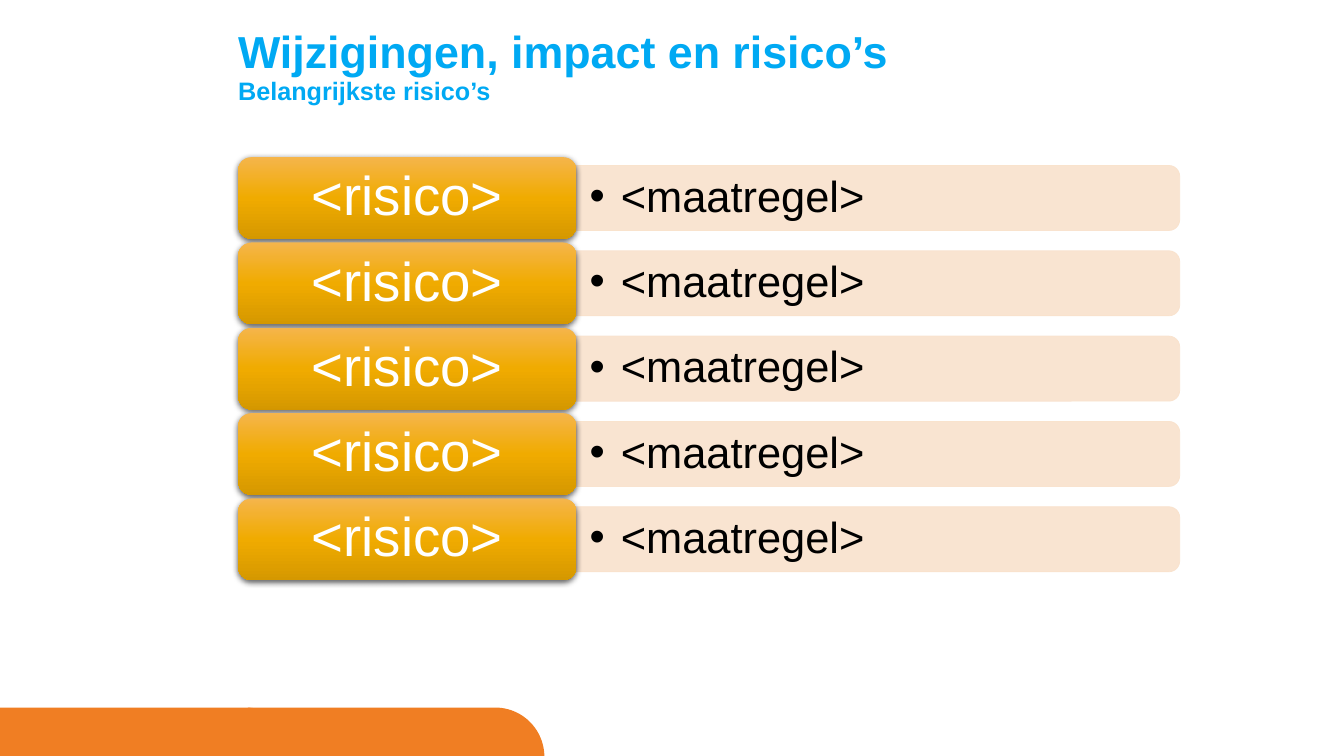
from copy import deepcopy
from dataclasses import dataclass
from math import cos, pi, sin

from lxml.etree import SubElement
from pptx import Presentation
from pptx.dml.color import RGBColor
from pptx.enum.shapes import MSO_SHAPE
from pptx.enum.text import MSO_ANCHOR, MSO_AUTO_SIZE, PP_ALIGN
from pptx.oxml.ns import qn
from pptx.util import Cm, Pt

# Content
TITLE = "Wijzigingen, impact en risico’s"
SUBTITLE = "Belangrijkste risico’s"
RISKS = [("<risico>", "<maatregel>")] * 5


@dataclass(frozen=True)
class Theme:
    font: str = "Arial"
    title: str = "00A9F3"
    footer: str = "F07E23"
    bar: str = "F9E2CC"
    card_text: str = "FFFFFF"
    bar_text: str = "000000"
    shadow: str = "000000"
    card_stops: tuple = ((0, "F5B54B"), (0.5, "F0AB00"), (1, "D59800"))
    title_size: int = 32
    subtitle_size: int = 18
    card_size: int = 39
    bar_size: int = 31


THEME = Theme()

# Layout in centimetres
TITLE_BOX = (6, 0.76, 27.86, 2)
LEFT, TOP, PITCH = 6, 3.96, 2.15
CARD_WIDTH, CARD_HEIGHT = 8.53, 2.06
BAR_WIDTH, BAR_HEIGHT = 15.2, 1.64
FOOTER_LEFTS, FOOTER_TOP = (-0.03, 6.25), 17.83
FOOTER_WIDTH, FOOTER_RADIUS = 7.47, 1.24
ARC_STEPS = 24


def color(value):
    return RGBColor.from_string(value)


def lengths(*values):
    return [Cm(value) for value in values]


def format_frame(frame, anchor, side=0, edge=0):
    values = {
        "word_wrap": True, "auto_size": MSO_AUTO_SIZE.NONE, "vertical_anchor": anchor,
        "margin_left": Cm(side), "margin_right": Cm(side),
        "margin_top": Cm(edge), "margin_bottom": Cm(edge),
    }
    for name, value in values.items():
        setattr(frame, name, value)


def format_paragraph(paragraph, alignment):
    values = {"alignment": alignment, "line_spacing": 0.9, "space_before": Pt(0)}
    for name, value in values.items():
        setattr(paragraph, name, value)


def add_run(paragraph, text, size, text_color, bold=False):
    run = paragraph.add_run()
    run.text = text
    for name, value in {"name": THEME.font, "size": Pt(size), "bold": bold}.items():
        setattr(run.font, name, value)
    run.font.color.rgb = color(text_color)


def add_footer_tab(slide, left):
    right, bottom = left + FOOTER_WIDTH, FOOTER_TOP + FOOTER_RADIUS
    center = right - FOOTER_RADIUS
    angles = [pi / 2 * step / ARC_STEPS for step in range(ARC_STEPS + 1)]
    corner = [
        lengths(center + FOOTER_RADIUS * sin(angle), bottom - FOOTER_RADIUS * cos(angle))
        for angle in angles
    ]
    builder = slide.shapes.build_freeform(*lengths(left, bottom))
    builder.add_line_segments([lengths(left, FOOTER_TOP), *corner], close=True)
    shape = builder.convert_to_shape()
    shape.shadow.inherit = False
    shape.fill.solid()
    shape.fill.fore_color.rgb = color(THEME.footer)
    shape.line.fill.background()


def add_title(slide):
    title = slide.shapes.title
    title.left, title.top, title.width, title.height = lengths(*TITLE_BOX)
    format_frame(title.text_frame, MSO_ANCHOR.TOP)
    paragraph = title.text_frame.paragraphs[0]
    format_paragraph(paragraph, PP_ALIGN.LEFT)
    add_run(paragraph, TITLE, THEME.title_size, THEME.title, bold=True)
    paragraph.add_line_break()
    add_run(paragraph, SUBTITLE, THEME.subtitle_size, THEME.title, bold=True)


def add_measure(slide, text, middle):
    # Bar: an upright shape turned a quarter, so its rounded end points right
    left = LEFT + CARD_WIDTH
    bar = slide.shapes.add_shape(
        MSO_SHAPE.ROUND_2_SAME_RECTANGLE,
        *lengths(left + (BAR_WIDTH - BAR_HEIGHT) / 2, middle - BAR_WIDTH / 2,
                 BAR_HEIGHT, BAR_WIDTH))
    bar.rotation = 90
    bar.shadow.inherit = False
    bar.line.width = Pt(0.5)
    for fill in (bar.fill, bar.line.fill):
        fill.solid()
        fill.fore_color.rgb = color(THEME.bar)
    for element in bar._element.spPr.iter(qn("a:srgbClr")):
        SubElement(element, qn("a:alpha"), val="90000")

    # Level text with a bullet
    box = slide.shapes.add_textbox(
        *lengths(left, middle - BAR_HEIGHT / 2, BAR_WIDTH, BAR_HEIGHT))
    format_frame(box.text_frame, MSO_ANCHOR.MIDDLE, 0.33, 0.16)
    paragraph = box.text_frame.paragraphs[0]
    format_paragraph(paragraph, PP_ALIGN.LEFT)
    properties = paragraph._p.get_or_add_pPr()
    properties.set("marL", str(Cm(0.79)))
    properties.set("indent", str(-Cm(0.79)))
    SubElement(properties, qn("a:buFont"), typeface=THEME.font)
    SubElement(properties, qn("a:buChar"), char="•")
    add_run(paragraph, text, THEME.bar_size, THEME.bar_text)


def add_risk(slide, text, top):
    card = slide.shapes.add_shape(
        MSO_SHAPE.ROUNDED_RECTANGLE, *lengths(LEFT, top, CARD_WIDTH, CARD_HEIGHT))
    card.line.fill.background()

    # Three-stop gradient, running downwards
    card.fill.gradient()
    card.fill.gradient_angle = 270
    stop_list = card._element.spPr.find(".//" + qn("a:gsLst"))
    stop_list.append(deepcopy(stop_list[0]))
    for stop, (position, value) in zip(card.fill.gradient_stops, THEME.card_stops):
        stop.position = position
        stop.color.rgb = color(value)

    # Soft shadow below the card
    card.shadow.inherit = False
    effects = card._element.spPr.find(qn("a:effectLst"))
    shadow = SubElement(effects, qn("a:outerShdw"), blurRad=str(Pt(4.5)),
                        dist=str(Pt(1.5)), dir="5400000", algn="ctr", rotWithShape="0")
    shadow_color = SubElement(shadow, qn("a:srgbClr"), val=THEME.shadow)
    SubElement(shadow_color, qn("a:alpha"), val="63000")

    format_frame(card.text_frame, MSO_ANCHOR.MIDDLE, 0.51, 0.3)
    paragraph = card.text_frame.paragraphs[0]
    format_paragraph(paragraph, PP_ALIGN.CENTER)
    add_run(paragraph, text, THEME.card_size, THEME.card_text)


def main():
    presentation = Presentation()
    presentation.slide_width, presentation.slide_height = lengths(33.87, 19.05)
    slide = presentation.slides.add_slide(presentation.slide_layouts[5])

    # Footer and title
    for left in FOOTER_LEFTS:
        add_footer_tab(slide, left)
    add_title(slide)

    # One row per risk
    for index, (risk, measure) in enumerate(RISKS):
        top = TOP + index * PITCH
        add_measure(slide, measure, top + CARD_HEIGHT / 2)
        add_risk(slide, risk, top)

    presentation.save("out.pptx")


if __name__ == "__main__":
    main()
